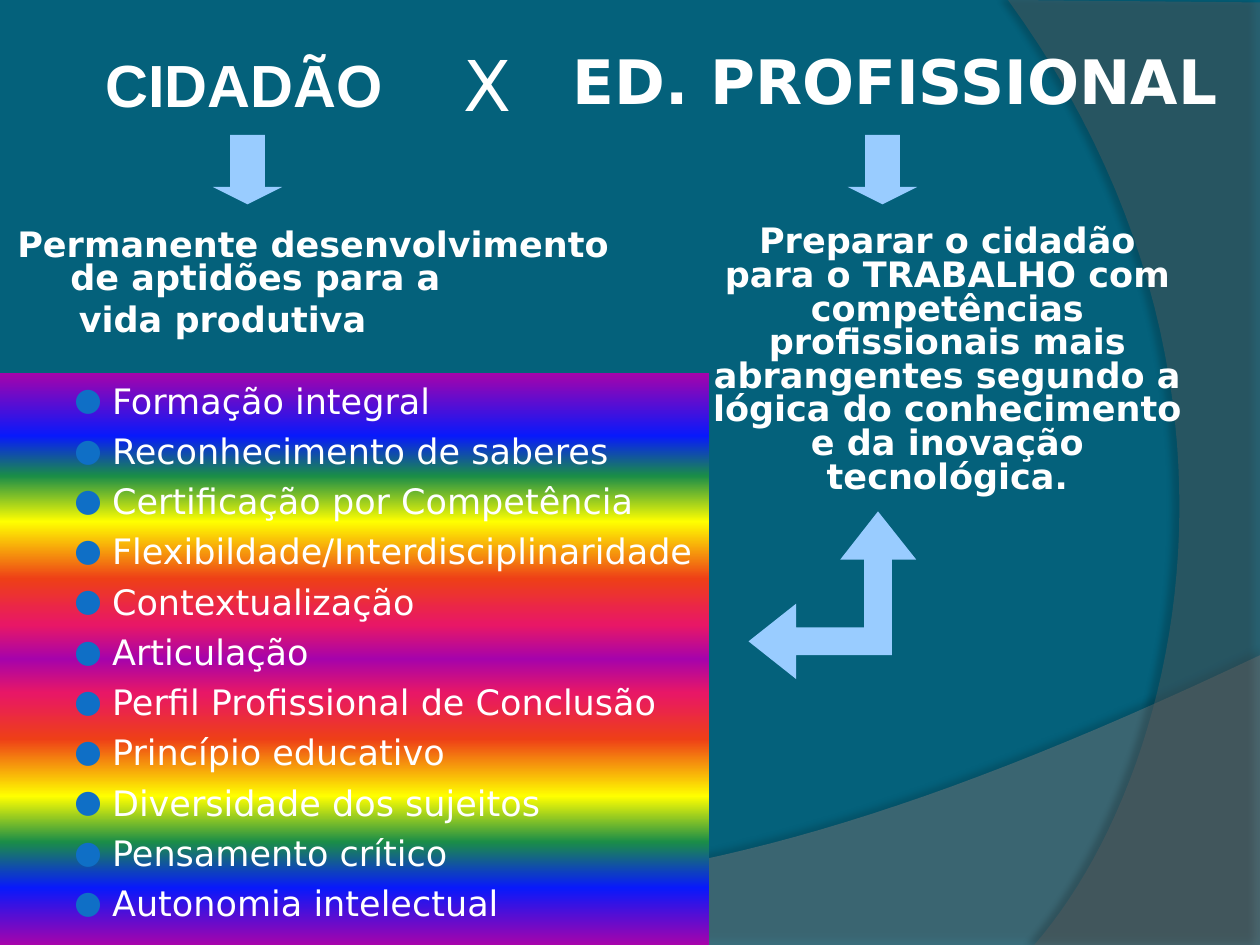
from dataclasses import dataclass, field
from typing import Any

from lxml import etree
from pptx import Presentation
from pptx import util as u
from pptx.dml.color import RGBColor
from pptx.enum import shapes, text
from pptx.oxml import parse_xml
from pptx.oxml.ns import nsdecls, qn

Point = tuple[float, float]


@dataclass(frozen=True)
class Theme:
    background: str = "04617B"
    white: str = "FFFFFF"
    arrow: str = "99CCFF"
    bullet: str = "0F6FC6"
    wave: str = "7F7F7F"
    arc: str = "5E5E5E"
    shadow: str = "000000"
    rainbow: tuple[str, ...] = ("A603AB", "0819FB", "1A8D48", "FFFF00", "EE3F17", "E81766")
    heading_font: str = "Arial"
    font: str = "DejaVu Sans"
    citizen_size: float = 34
    education_size: float = 35
    versus_size: float = 40
    body_size: float = 20


@dataclass(frozen=True)
class Line:
    words: str
    left: float = 0
    indent: float = 0
    bullet: bool = False
    fmt: dict[str, Any] = field(default_factory=dict)


@dataclass(frozen=True)
class Block:
    box: tuple[float, float, float, float]
    lines: list[Line]
    font: dict[str, Any]
    frame: dict[str, Any] = field(default_factory=dict)


@dataclass(frozen=True)
class Backdrop:
    points: list[Point]
    color: str
    alpha: int
    shadow_alpha: int
    shadow_distance: float
    shadow_angle: int


T = Theme()


def apply(target: Any, values: dict[str, Any]) -> None:
    for name, value in values.items():
        setattr(target, name, value)


def paint(sp: Any, color: str) -> None:
    sp.shadow.inherit = False
    sp.fill.solid()
    sp.fill.fore_color.rgb = RGBColor.from_string(color)
    sp.line.fill.background()


def add_bullet(p: Any) -> None:
    for tag, key, value in (("buSzPct", "val", "90000"), ("buFont", "typeface", T.font),
                            ("buChar", "char", "●")):
        if tag == "buSzPct":
            color = etree.SubElement(p._p.get_or_add_pPr(), qn("a:buClr"))
            etree.SubElement(color, qn("a:srgbClr")).set("val", T.bullet)
        etree.SubElement(p._p.get_or_add_pPr(), qn(f"a:{tag}")).set(key, value)


def write(sp: Any, block: Block) -> None:
    tf = sp.text_frame
    apply(tf, {"word_wrap": True, "vertical_anchor": text.MSO_ANCHOR.TOP, **block.frame})
    for i, line in enumerate(block.lines):
        p = tf.paragraphs[0] if i == 0 else tf.add_paragraph()
        apply(p, {"alignment": text.PP_ALIGN.LEFT, **line.fmt})
        pPr = p._p.get_or_add_pPr()
        pPr.set("marL", str(u.Cm(line.left)))
        pPr.set("indent", str(u.Cm(line.indent)))
        if line.bullet:
            add_bullet(p)
        r = p.add_run()
        r.text = line.words
        apply(r.font, {"name": T.font, **block.font})
        r.font.color.rgb = RGBColor.from_string(T.white)


def add_text(s: Any, block: Block) -> None:
    write(s.shapes.add_textbox(*map(u.Cm, block.box)), block)


def add_rainbow(s: Any, block: Block) -> None:
    sp = s.shapes.add_shape(shapes.MSO_SHAPE.RECTANGLE, *map(u.Cm, block.box))
    paint(sp, T.white)
    sp.fill.gradient()
    sp.fill.gradient_angle = 270
    half = list(zip((0, 11, 18, 26, 36, 44), T.rainbow))
    back = list(zip((56, 64, 74, 82, 90, 100), reversed(T.rainbow)))
    stops = sp._element.spPr.find(".//" + qn("a:gsLst"))
    for old in list(stops):
        stops.remove(old)
    for position, color in [*half, (50, T.rainbow[0]), *back]:
        gs = etree.SubElement(stops, qn("a:gs"))
        gs.set("pos", str(position * 1000))
        etree.SubElement(gs, qn("a:srgbClr")).set("val", color)
    write(sp, block)


def add_outline(s: Any, points: list[Point], color: str) -> Any:
    first, *rest = [(u.Cm(x), u.Cm(y)) for x, y in points]
    builder = s.shapes.build_freeform(*first)
    builder.add_line_segments(rest, close=True)
    sp = builder.convert_to_shape()
    paint(sp, color)
    return sp


def add_backdrop(s: Any, b: Backdrop) -> None:
    spPr = add_outline(s, b.points, b.color)._element.spPr
    color = spPr.find(qn("a:solidFill"))[0]
    etree.SubElement(color, qn("a:alpha")).set("val", str(b.alpha * 1000))
    spPr.find(qn("a:effectLst")).append(parse_xml(
        f'<a:outerShdw {nsdecls("a")} blurRad="{u.Pt(4)}" dist="{u.Pt(b.shadow_distance)}" '
        f'dir="{b.shadow_angle * 60000}" algn="ctr" rotWithShape="0">'
        f'<a:srgbClr val="{T.shadow}"><a:alpha val="{b.shadow_alpha * 1000}"/></a:srgbClr>'
        '</a:outerShdw>'))


def curve(a: Point, b: Point, c: Point, d: Point, steps: int = 48) -> list[Point]:
    def at(t: float, i: int) -> float:
        k = 1 - t
        return k**3 * a[i] + 3 * k * k * t * b[i] + 3 * k * t * t * c[i] + t**3 * d[i]
    return [(at(n / steps, 0), at(n / steps, 1)) for n in range(steps + 1)]


def add_down_arrow(s: Any, left: float) -> None:
    box = map(u.Cm, (left, 2.72, 1.4, 1.4))
    sp = s.shapes.add_shape(shapes.MSO_SHAPE.DOWN_ARROW, *box)
    sp.adjustments[0], sp.adjustments[1] = 0.5, 0.25
    paint(sp, T.arrow)


def main() -> None:
    prs = Presentation()
    apply(prs, {"slide_width": u.Cm(25.4), "slide_height": u.Cm(19.05)})
    s = prs.slides.add_slide(prs.slide_layouts[6])
    s.background.fill.solid()
    s.background.fill.fore_color.rgb = RGBColor.from_string(T.background)

    wave = curve((25.4, 13.21), (14.2, 18.52), (9.93, 18.26), (0, 17.91))
    arc = curve((20.85, 19.05), (23.75, 15.72), (25.86, 7.62), (20.32, 0))
    add_backdrop(s, Backdrop([*wave, (0, 19.05), (25.4, 19.05)], T.wave, 45, 35, 3.5, 270))
    add_backdrop(s, Backdrop([*arc, (25.4, 0.05), (25.4, 19.05)], T.arc, 40, 45, 4, 180))

    size, bold = u.Pt(T.body_size), {"size": u.Pt(T.body_size), "bold": True}
    before = {"space_before": u.Pt(4.7)}
    tight = {**before, "line_spacing": 0.8}
    centre = {"alignment": text.PP_ALIGN.CENTER}
    grow = {"auto_size": text.MSO_AUTO_SIZE.SHAPE_TO_FIT_TEXT}
    margins = {f"margin_{side}": u.Cm(0.13) for side in ("left", "right", "top", "bottom")}
    topics = ["Formação integral", "Reconhecimento de saberes", "Certificação por Competência",
              "Flexibildade/Interdisciplinaridade", "Contextualização", "Articulação",
              "Perfil Profissional de Conclusão", "Princípio educativo",
              "Diversidade dos sujeitos", "Pensamento crítico", "Autonomia intelectual"]

    add_text(s, Block((1.3, 0.71, 7.24, 1.96), [Line("CIDADÃO", fmt=centre)],
                      {"name": T.heading_font, "size": u.Pt(T.citizen_size), "bold": True},
                      {**margins, "vertical_anchor": text.MSO_ANCHOR.MIDDLE}))
    add_text(s, Block((0, 4.52, 13.11, 2.79), [
        Line("Permanente desenvolvimento de aptidões para a", 1.17, -1.07, fmt=tight),
        Line("vida produtiva", 1.34, fmt=tight)], bold))
    add_rainbow(s, Block((0, 7.52, 14.3, 11.53),
                         [Line(topic, 2.01, -0.76, True, before) for topic in topics],
                         {"size": size}))
    add_text(s, Block((12.9, 4.45, 11.23, 5.87), [
        Line("\tPreparar o cidadão para o TRABALHO com competências profissionais mais "
             "abrangentes segundo a lógica do conhecimento e da inovação tecnológica.",
             1.17, -1.07, fmt={**tight, **centre})], bold))
    add_text(s, Block((11.3, 0.74, 13.92, 1.73), [Line("ED. PROFISSIONAL")],
                      {"size": u.Pt(T.education_size), "bold": True},
                      {**grow, "word_wrap": False}))
    add_text(s, Block((9.09, 0.71, 1.6, 1.96), [Line("X")],
                      {"size": u.Pt(T.versus_size)}, grow))

    for left in (4.29, 17.09):
        add_down_arrow(s, left)
    add_outline(s, [(17.7, 10.31), (16.94, 11.28), (17.42, 11.28), (17.42, 12.65),
                    (16.05, 12.65), (16.05, 12.17), (15.09, 12.93), (16.05, 13.69),
                    (16.05, 13.21), (17.98, 13.21), (17.98, 11.28), (18.47, 11.28)], T.arrow)
    prs.save("out.pptx")


if __name__ == "__main__":
    main()
